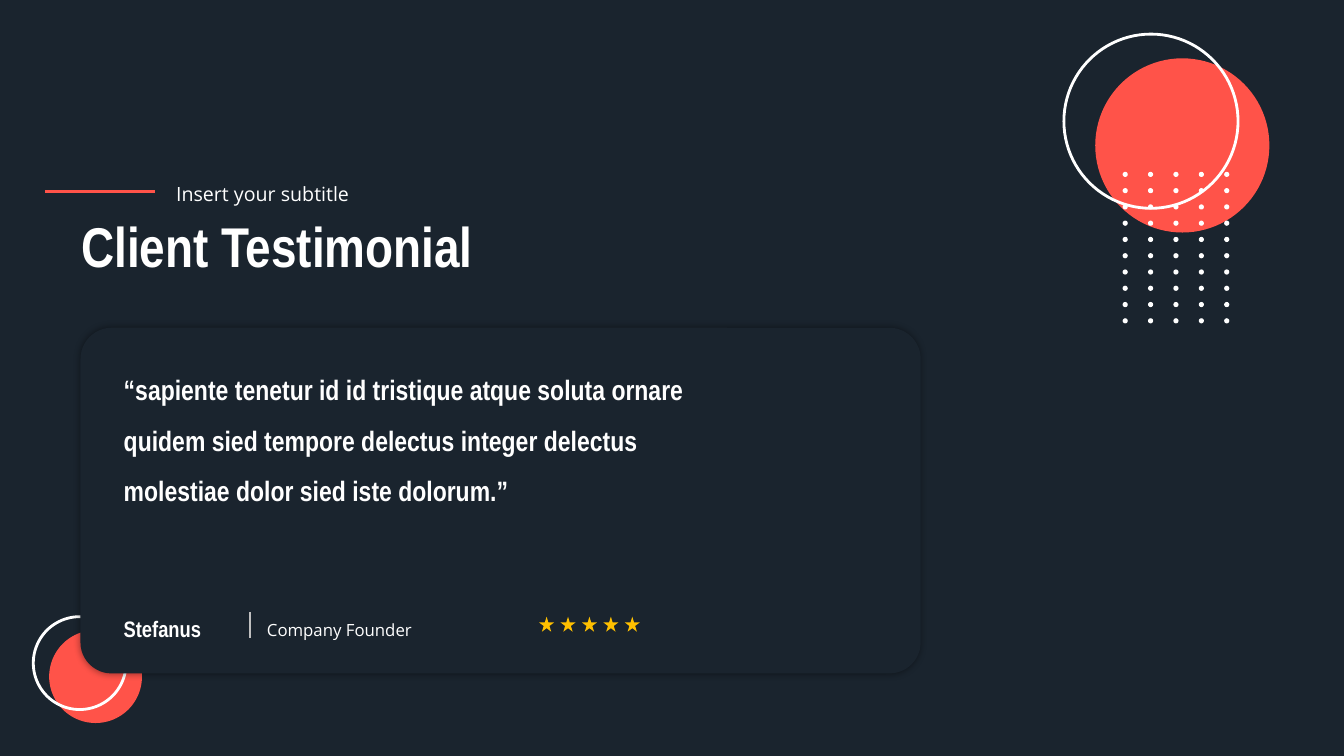
from lxml.etree import SubElement
from pptx import Presentation
from pptx.dml.color import RGBColor
from pptx.enum.shapes import MSO_CONNECTOR as LINK, MSO_SHAPE as KIND
from pptx.enum.text import MSO_ANCHOR as ANCHOR, MSO_AUTO_SIZE as FIT
from pptx.oxml.ns import qn
from pptx.util import Cm, Pt

NAVY = RGBColor(0x1A, 0x24, 0x2E)
CORAL = RGBColor(0xFF, 0x53, 0x49)
WHITE = RGBColor(0xFF, 0xFF, 0xFF)
GREY = RGBColor(0xBF, 0xBF, 0xBF)
GOLD = RGBColor(0xFF, 0xC0, 0x00)
HEAD = "Arial Narrow"
BODY = "Open Sans"

deck = Presentation()
deck.slide_width = Cm(33.88)
deck.slide_height = Cm(19.05)
slide = deck.slides.add_slide(deck.slide_layouts[6])
slide.background.fill.solid()
slide.background.fill.fore_color.rgb = NAVY


def draw(kind, left, top, width, height, fill=None):
    shape = slide.shapes.add_shape(kind, Cm(left), Cm(top), Cm(width), Cm(height))
    shape.shadow.inherit = False
    if fill is None:
        shape.fill.background()
        shape.line.color.rgb = WHITE
        shape.line.width = Pt(2)
    else:
        shape.fill.solid()
        shape.fill.fore_color.rgb = fill
        shape.line.fill.background()
    return shape


def write(text, left, top, width, height, font, size, bold, space=1.5):
    box = slide.shapes.add_textbox(Cm(left), Cm(top), Cm(width), Cm(height))
    frame = box.text_frame
    frame.word_wrap = True
    if space > 1:
        frame.auto_size = FIT.SHAPE_TO_FIT_TEXT
        frame.margin_left = frame.margin_right = 0
        frame.margin_top = frame.margin_bottom = 0
    else:
        frame.vertical_anchor = ANCHOR.MIDDLE
    para = frame.paragraphs[0]
    para.line_spacing = space
    run = para.add_run()
    run.text = text
    run.font.name = font
    run.font.size = Pt(size)
    run.font.bold = bold
    run.font.color.rgb = WHITE


for left, top, size, fill in [
    (1.24, 15.88, 2.34, CORAL),
    (0.84, 15.54, 2.34, None),
    (27.61, 1.47, 4.39, CORAL),
    (26.82, 0.86, 4.39, None),
]:
    draw(KIND.OVAL, left, top, size, size, fill)

for col in range(5):
    for row in range(10):
        draw(KIND.OVAL, 28.3 + 0.64 * col, 4.33 + 0.41 * row, 0.13, 0.13, WHITE)

card = draw(KIND.ROUNDED_RECTANGLE, 2.03, 8.26, 21.18, 8.71, NAVY)
card.adjustments[0] = 0.09
glow = SubElement(
    card._element.spPr.find(qn("a:effectLst")), qn("a:outerShdw"),
    blurRad=str(Pt(5)), dist="0", dir="0", algn="ctr", rotWithShape="0",
)
shade = SubElement(glow, qn("a:srgbClr"), val="000000")
SubElement(shade, qn("a:alpha"), val="40000")

write("Client Testimonial", 1.8, 5.13, 16.36, 2.29, HEAD, 40, True, 0.9)
write("Insert your subtitle", 4.19, 4.44, 12.07, 0.97, BODY, 14, False, 0.9)
write(
    "“sapiente tenetur id id tristique atque soluta ornare quidem sied tempore "
    "delectus integer delectus molestiae dolor sied iste dolorum.”",
    3.12, 8.97, 15.06, 5, HEAD, 20, True,
)
write("Stefanus", 3.12, 15.16, 4.04, 0.91, HEAD, 16, True)
write("Company Founder", 6.73, 15.36, 5.84, 0.69, BODY, 12, False)

for left, top, right, low, tint, width in [
    (1.14, 4.83, 3.91, 4.83, CORAL, 2),
    (6.3, 15.42, 6.3, 16.08, GREY, 1),
]:
    rule = slide.shapes.add_connector(
        LINK.STRAIGHT, Cm(left), Cm(top), Cm(right), Cm(low)
    )
    rule.line.color.rgb = tint
    rule.line.width = Pt(width)
    SubElement(rule._element.spPr, qn("a:effectLst"))

for star in range(5):
    draw(KIND.STAR_5_POINT, 13.59 + 0.54 * star, 15.54, 0.38, 0.38, GOLD)

deck.save("out.pptx")
